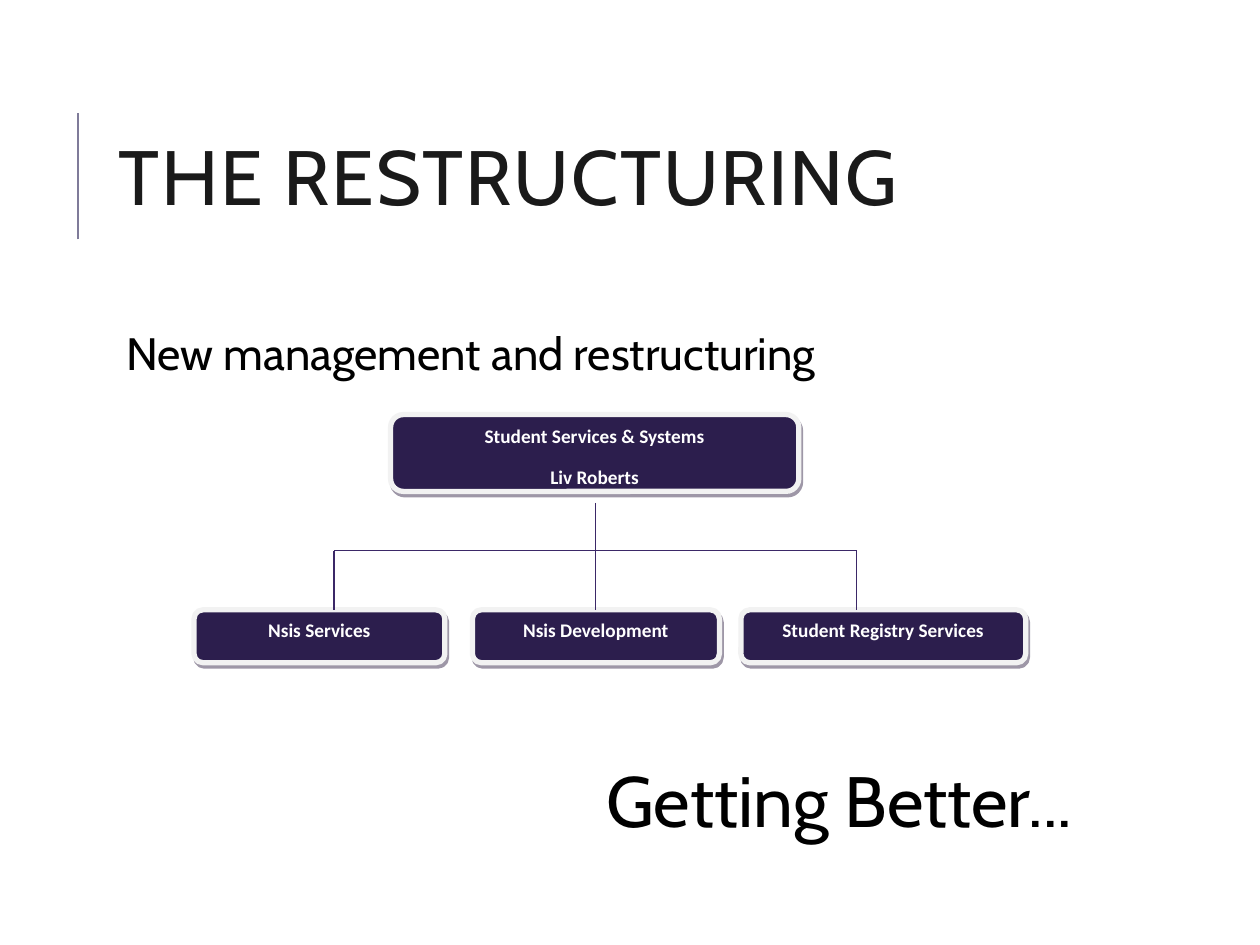
from lxml.etree import SubElement
from pptx import Presentation
from pptx.dml.color import RGBColor
from pptx.enum.shapes import MSO_CONNECTOR, MSO_SHAPE
from pptx.enum.text import MSO_ANCHOR, MSO_AUTO_SIZE, PP_ALIGN
from pptx.oxml.ns import qn
from pptx.util import Pt

BLACK = RGBColor(0x00, 0x00, 0x00)
INK = RGBColor(0x1A, 0x1A, 0x1A)
WHITE = RGBColor(0xFF, 0xFF, 0xFF)
NAVY = RGBColor(0x2C, 0x1E, 0x4D)
FRAME = RGBColor(0xF2, 0xF2, 0xF2)
SHADE = RGBColor(0x3F, 0x31, 0x51)
LINK = RGBColor(0x3B, 0x28, 0x67)
MAUVE = RGBColor(0x7F, 0x7B, 0x99)


class Chart:
    """Draws an organisation chart slide; all lengths are in points."""

    font = "Cabin"
    label = "Calibri"

    def __init__(self, slide):
        self.slide = slide

    def style(self, para, font, size, color, bold=False):
        for run in para.runs:
            run.font.name = font
            run.font.size = Pt(size)
            run.font.color.rgb = color
            run.font.bold = bold

    def place(self, shape, x, y, w, h):
        shape.left, shape.top = Pt(x), Pt(y)
        shape.width, shape.height = Pt(w), Pt(h)

    def title(self, text, x, y, w, h):
        shape = self.slide.shapes.title
        self.place(shape, x, y, w, h)
        frame = shape.text_frame
        frame.text = text
        frame.auto_size = MSO_AUTO_SIZE.NONE
        frame.vertical_anchor = MSO_ANCHOR.MIDDLE
        para = frame.paragraphs[0]
        para.alignment = PP_ALIGN.LEFT
        para.line_spacing = 0.8
        self.style(para, self.font, 44, INK)
        para.runs[0].font._element.set("spc", "100")

    def body(self, rows, x, y, w, h):
        """Fill the body with rows of (text, size, align, indent, gap above)."""
        shape = self.slide.placeholders[1]
        self.place(shape, x, y, w, h)
        frame = shape.text_frame
        frame.text = "\n".join(row[0] for row in rows)
        frame.auto_size = MSO_AUTO_SIZE.NONE
        frame.margin_left = frame.margin_right = Pt(3.6)
        frame.margin_top = frame.margin_bottom = Pt(3.6)
        for para, (_, size, align, indent, gap) in zip(frame.paragraphs, rows):
            para.alignment = align
            para.line_spacing = 0.8
            para.space_before, para.space_after = Pt(gap), Pt(2)
            props = para._p.get_or_add_pPr()
            props.set("marL", str(Pt(indent)))
            props.set("indent", "0")
            SubElement(props, qn("a:buNone"))
            self.style(para, self.font, size, BLACK)

    def box(self, text, x, y, w, h):
        shape = self.slide.shapes.add_shape(
            MSO_SHAPE.ROUNDED_RECTANGLE, Pt(x), Pt(y), Pt(w), Pt(h))
        shape.fill.solid()
        shape.fill.fore_color.rgb = NAVY
        shape.line.color.rgb = FRAME
        shape.line.width = Pt(3)
        self.shade(shape)
        frame = shape.text_frame
        frame.text = text
        frame.vertical_anchor = MSO_ANCHOR.TOP
        for para in frame.paragraphs:
            para.alignment = PP_ALIGN.CENTER
            para.space_after = Pt(10)
            self.style(para, self.label, 11, WHITE, True)

    def shade(self, shape):
        """Give the shape a hard, half-clear shadow to the lower right."""
        shape.shadow.inherit = False
        effects = shape._element.spPr.find(qn("a:effectLst"))
        outer = SubElement(effects, qn("a:outerShdw"), blurRad="0",
                           dist=str(Pt(2.2)), dir=str(63 * 60000),
                           algn="ctr", rotWithShape="0")
        color = SubElement(outer, qn("a:srgbClr"), val=str(SHADE))
        SubElement(color, qn("a:alpha"), val="50000")

    def line(self, x1, y1, x2, y2, color=LINK, width=0.75):
        link = self.slide.shapes.add_connector(
            MSO_CONNECTOR.STRAIGHT, Pt(x1), Pt(y1), Pt(x2), Pt(y2))
        link.line.color.rgb = color
        link.line.width = Pt(width)
        SubElement(link._element.spPr, qn("a:effectLst"))


def main():
    deck = Presentation()
    deck.slide_width, deck.slide_height = Pt(720), Pt(540)
    chart = Chart(deck.slides.add_slide(deck.slide_layouts[1]))

    chart.line(44.6, 136.8, 44.6, 64.8, MAUVE, 1.5)
    chart.title("THE RESTRUCTURING", 60.5, 46, 574, 118)
    chart.body([
        ("New management and restructuring", 25.9, PP_ALIGN.LEFT, 7.2, 0),
        ("Getting Better...", 40.7, PP_ALIGN.RIGHT, 0, 223),
    ], 61.2, 188, 555, 302)

    chart.box("Student Services & Systems\nLiv Roberts", 223.2, 236.9, 233.3, 43.9)
    top, bar = 348.5, 314.6
    teams = [
        ("Nsis Services", 110.9, 143.3),
        ("Nsis Development", 270, 141.1),
        ("Student Registry Services", 423.4, 162.7),
    ]
    for name, x, w in teams:
        chart.box(name, x, top, w, 30.2)

    mid, reach = 340.2, 149.4
    chart.line(mid - reach, bar, mid + reach, bar)
    chart.line(mid, 287.3, mid, bar)
    for x in (mid - reach, mid, mid + reach):
        chart.line(x, bar, x, top)

    deck.save("out.pptx")


if __name__ == "__main__":
    main()
